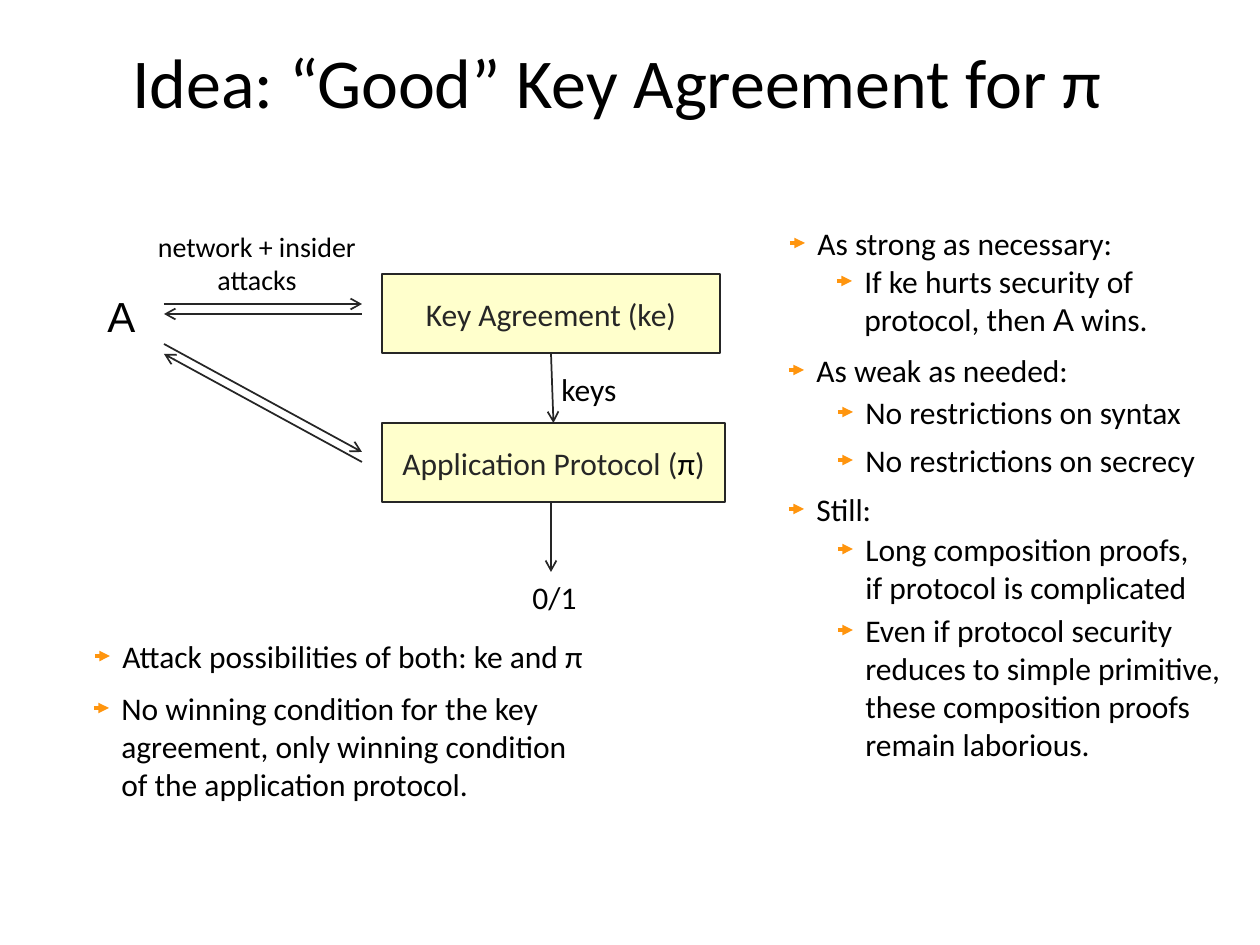
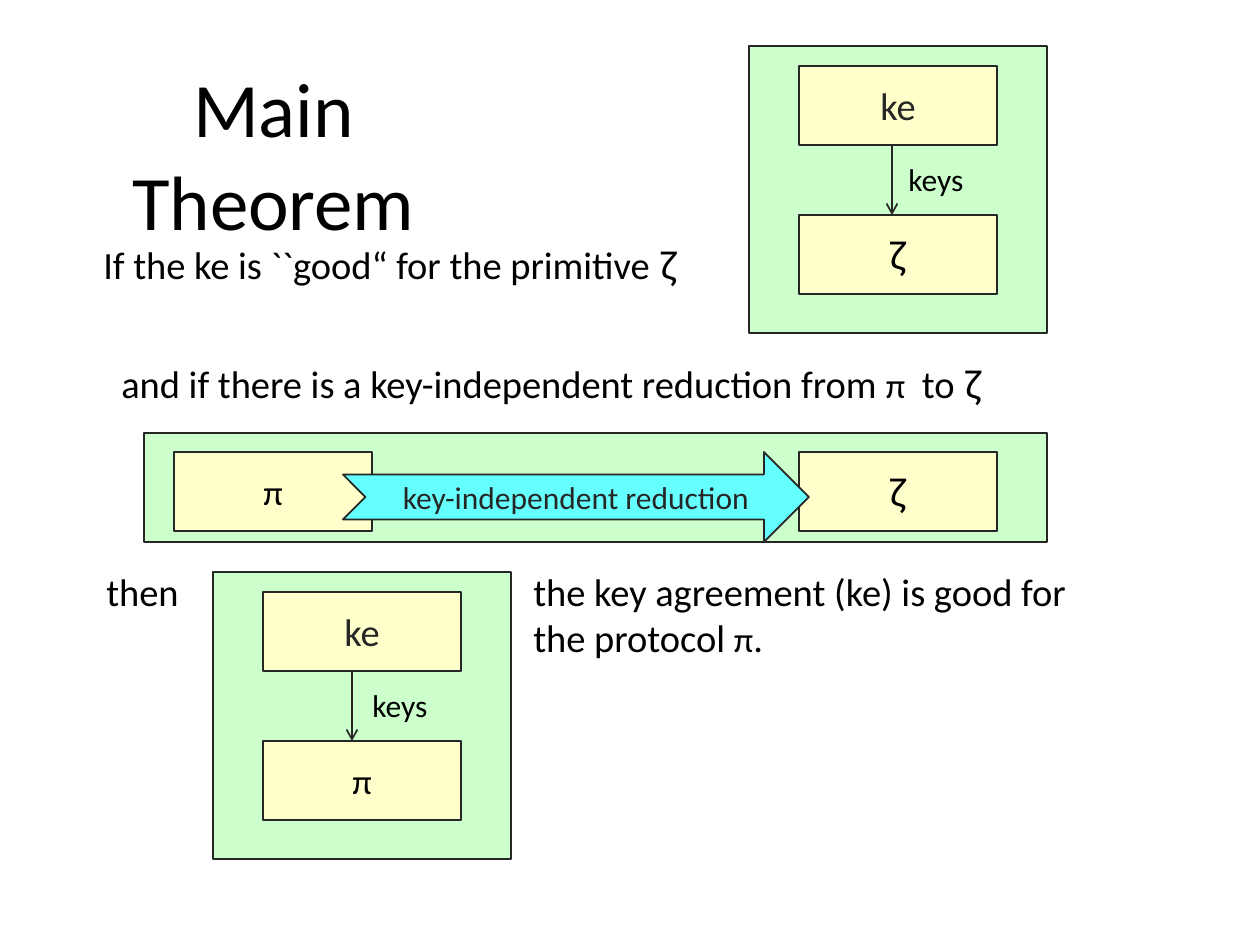
from dataclasses import dataclass

from lxml import etree
from pptx import Presentation
from pptx.dml.color import RGBColor
from pptx.enum.shapes import MSO_CONNECTOR, MSO_SHAPE
from pptx.enum.text import MSO_ANCHOR, PP_ALIGN
from pptx.oxml.ns import qn
from pptx.util import Emu, Pt

RECTANGLE = MSO_SHAPE.RECTANGLE
NOTCHED_ARROW = MSO_SHAPE.NOTCHED_RIGHT_ARROW
STRAIGHT = MSO_CONNECTOR.STRAIGHT
LEFT, CENTER = PP_ALIGN.LEFT, PP_ALIGN.CENTER
TOP, MIDDLE = MSO_ANCHOR.TOP, MSO_ANCHOR.MIDDLE
SIDE_TOP, SIDE_BOTTOM = 0, 2

BLACK = RGBColor(0x00, 0x00, 0x00)
INK = RGBColor(0x26, 0x26, 0x26)
YELLOW = RGBColor(0xFF, 0xFF, 0xCC)
GREEN = RGBColor(0xCC, 0xFF, 0xCC)
CYAN = RGBColor(0x66, 0xFF, 0xFF)
ORANGE = RGBColor(0xFF, 0x95, 0x0E)

BODY_FONT, ADVERSARY_FONT, ZETA_FONT = "Calibri", "Arial", "Roboto"
PX_PER_INCH = 126
MARKER_WIDTH = 15
MARKER_DROP = 25
LINE_HEIGHT = 38
BOX_HEIGHT = 79
SMALL_BOX_WIDTH = 198


@dataclass
class Run:
    text: str
    size: int = 18
    color: RGBColor = BLACK
    font: str = BODY_FONT


ZETA = Run("ζ", 22, font=ZETA_FONT)
PI = Run("π", 20)
KE = Run("ke", 22, INK)


def px(length):
    return Emu(round(length * 914400 / PX_PER_INCH))


def fill_text(frame, lines, alignment):
    """Write each list of runs as one paragraph."""
    for index, runs in enumerate(lines):
        paragraph = frame.add_paragraph() if index else frame.paragraphs[0]
        paragraph.alignment = alignment
        for item in runs:
            run = paragraph.add_run()
            run.text = item.text
            run.font.size = Pt(item.size)
            run.font.name = item.font
            run.font.color.rgb = item.color


def add_label(slide, left, top, width, height, *lines, alignment=LEFT, anchor=TOP):
    shape = slide.shapes.add_textbox(px(left), px(top), px(width), px(height))
    frame = shape.text_frame
    frame.word_wrap = True
    frame.vertical_anchor = anchor
    fill_text(frame, lines, alignment)


def add_title(slide, left, top, width, height, text, size):
    add_label(slide, left, top, width, height, [Run(text, size)],
              alignment=CENTER, anchor=MIDDLE)


def add_box(slide, left, top, width, height, fill, runs=(), kind=RECTANGLE):
    shape = slide.shapes.add_shape(kind, px(left), px(top), px(width), px(height))
    shape.shadow.inherit = False
    shape.fill.solid()
    shape.fill.fore_color.rgb = fill
    shape.line.color.rgb = INK
    shape.line.width = Pt(1)
    if runs:
        shape.text_frame.word_wrap = False
        shape.text_frame.vertical_anchor = MIDDLE
        fill_text(shape.text_frame, [runs], CENTER)
    return shape


def add_arrow(slide, start, end, color=INK, weight=1, head="arrow"):
    arrow = slide.shapes.add_connector(STRAIGHT, *map(px, start + end))
    arrow.line.color.rgb = color
    arrow.line.width = Pt(weight)
    etree.SubElement(arrow.line._get_or_add_ln(), qn("a:tailEnd"), type=head)
    etree.SubElement(arrow._element.spPr, qn("a:effectLst"))
    return arrow


def add_arrow_pair(slide, start, end, gap=10):
    """Two opposite arrows, the one back running a gap below."""
    add_arrow(slide, start, end)
    add_arrow(slide, (end[0], end[1] + gap), (start[0], start[1] + gap))


def add_marked_list(slide, left, top, items):
    """Items are (indent, drop, width, lines), measured from the list's corner."""
    for indent, drop, width, lines in items:
        marker_left, item_top = left + indent, top + drop
        text_left, marker_y = marker_left + MARKER_WIDTH, item_top + MARKER_DROP
        add_arrow(slide, (marker_left, marker_y), (text_left, marker_y),
                  ORANGE, 0, "triangle")
        rows = [[Run(line)] if isinstance(line, str) else line for line in lines]
        add_label(slide, text_left, item_top, width,
                  12 + LINE_HEIGHT * len(rows), *rows)


def add_protocol_diagram(slide, left, top):
    # Adversary and its channels
    add_label(slide, left, top + 61, 59, 63, [Run("A", 24, font=ADVERSARY_FONT)])
    add_label(slide, left + 49, top, 226, 81, [Run("network + insider", 16)],
              [Run("attacks", 16)], alignment=CENTER)
    near, far = left + 69, left + 267
    add_arrow_pair(slide, (near, top + 81), (far, top + 81))
    add_arrow_pair(slide, (near, top + 121), (far, top + 229))

    # Key agreement feeding the application protocol
    agreement = add_box(slide, left + 287, top + 51, 338, BOX_HEIGHT, YELLOW,
                        [Run("Key Agreement (ke)", color=INK)])
    application = add_box(slide, left + 287, top + 200, 343, BOX_HEIGHT, YELLOW,
                          [Run("Application Protocol (", color=INK), Run("π"),
                           Run(")", color=INK)])
    middle = left + 456
    arrow = add_arrow(slide, (middle, top + 130), (middle, top + 200))
    arrow.begin_connect(agreement, SIDE_BOTTOM)
    arrow.end_connect(application, SIDE_TOP)
    add_label(slide, left + 454, top + 141, 92, 50, [Run("keys")])

    # Output
    add_arrow(slide, (middle, top + 279), (middle, top + 349))
    add_label(slide, left + 425, top + 349, 82, 50, [Run("0/1")])


def add_key_stack(slide, left, top, lower_run, arrow_offset):
    """Key agreement handing keys to the part below it."""
    add_box(slide, left, top, 298, 287, GREEN)
    for drop, run in ((20, KE), (169, lower_run)):
        add_box(slide, left + 50, top + drop, SMALL_BOX_WIDTH, BOX_HEIGHT, YELLOW, [run])
    arrow_x = left + arrow_offset
    add_arrow(slide, (arrow_x, top + 99), (arrow_x, top + 169))
    add_label(slide, left + 147, top + 108, 92, 50, [Run("keys")])


def add_reduction_band(slide, left, top):
    add_box(slide, left, top, 903, 109, GREEN)
    for offset, run in ((655, ZETA), (30, PI)):
        add_box(slide, left + offset, top + 19, SMALL_BOX_WIDTH, BOX_HEIGHT, YELLOW, [run])
    add_box(slide, left + 199, top + 19, 466, 90, CYAN,
            [Run("key-independent reduction", color=INK)], NOTCHED_ARROW)


def build_idea_slide(slide):
    add_title(slide, 114, 32, 1006, 98, "Idea: “Good” Key Agreement for π", 40)
    add_protocol_diagram(slide, 95, 223)
    # Remarks below the diagram
    add_marked_list(slide, 94, 631, [
        (1, 0, 493, ["Attack possibilities of both: ke and π"]),
        (0, 52, 476, ["No winning condition for the key",
                      "agreement, only winning condition",
                      "of the application protocol."]),
    ])
    # Requirements on the right
    add_marked_list(slide, 789, 218, [
        (1, 0, 330, ["As strong as necessary:"]),
        (48, 38, 330, ["If ke hurts security of",
                       [Run("protocol, then "), Run("A ", font=ADVERSARY_FONT),
                        Run("wins.")]]),
        (0, 127, 290, ["As weak as needed:"]),
        (49, 169, 360, ["No restrictions on syntax"]),
        (49, 217, 370, ["No restrictions on secrecy"]),
        (0, 266, 90, ["Still:"]),
        (49, 306, 360, ["Long composition proofs,", "if protocol is complicated"]),
        (49, 387, 390, ["Even if protocol security", "reduces to simple primitive,",
                        "these composition proofs", "remain laborious."]),
    ])


def build_theorem_slide(slide):
    add_title(slide, 94, 117, 359, 72, "Main Theorem", 44)
    # First premise
    add_label(slide, 91, 235, 630, 59,
              [Run("If the ke is ``good“ for the primitive ", 22), ZETA])
    add_key_stack(slide, 749, 46, ZETA, 143)
    # Second premise
    add_label(slide, 109, 354, 910, 106,
              [Run("and if there is a key-independent reduction from ", 22),
               Run("π ", 20), Run(" to ", 22), ZETA])
    add_reduction_band(slide, 144, 433)
    # Conclusion
    add_label(slide, 94, 562, 112, 59, [Run("then", 22)])
    add_key_stack(slide, 213, 572, PI, 139)
    add_label(slide, 521, 562, 580, 106,
              [Run("the key agreement (ke) is good for", 22)],
              [Run("the protocol ", 22), PI, Run(".", 22)])


def main():
    presentation = Presentation()
    presentation.slide_width, presentation.slide_height = px(1260), px(945)
    blank_layout = presentation.slide_layouts[6]
    for build in (build_idea_slide, build_theorem_slide):
        build(presentation.slides.add_slide(blank_layout))
    presentation.save("out.pptx")


if __name__ == "__main__":
    main()
